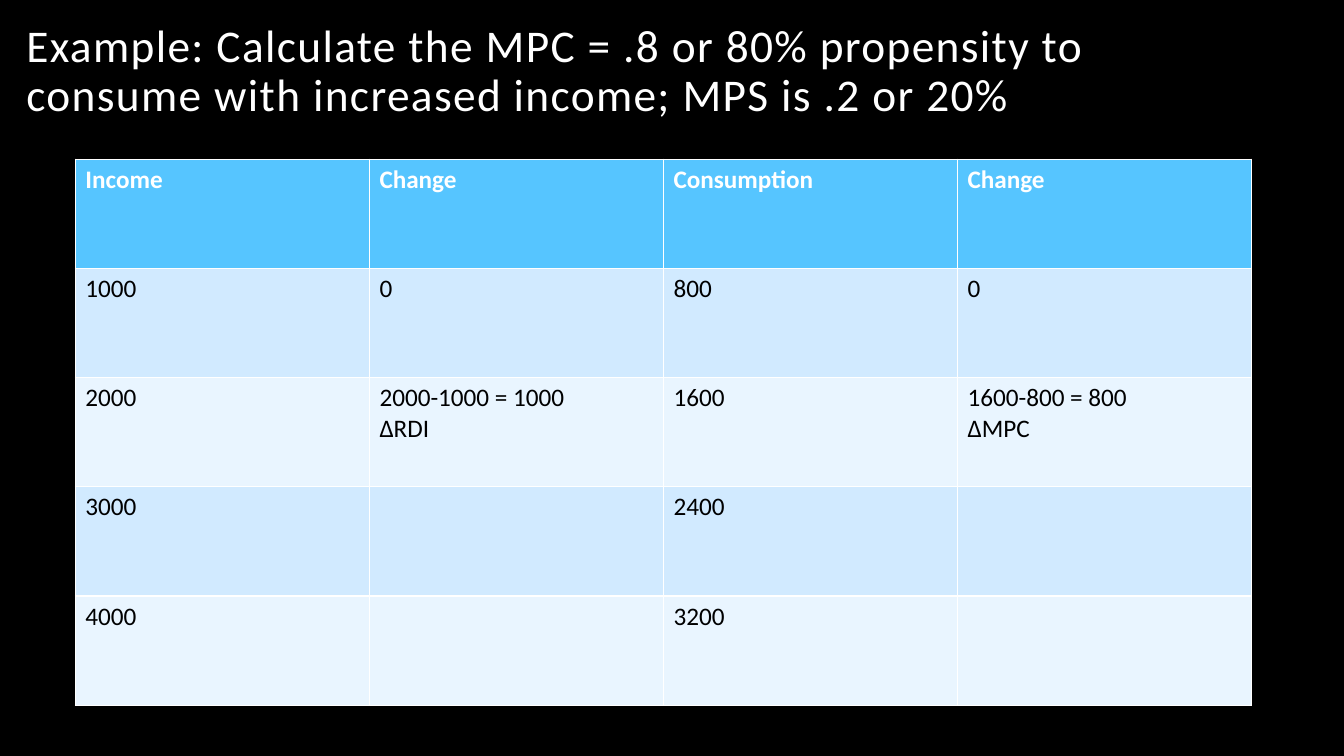
from dataclasses import dataclass

from pptx import Presentation
from pptx.dml.color import RGBColor
from pptx.enum.text import MSO_ANCHOR, MSO_AUTO_SIZE, PP_ALIGN
from pptx.util import Cm, Pt

# Content
TITLE = ("Example: Calculate the MPC = .8 or 80% propensity to consume "
         "with increased income; MPS is .2 or 20%")
ROWS = [
    ("Income", "Change", "Consumption", "Change"),
    ("1000", "0", "800", "0"),
    ("2000", "2000-1000 = 1000\n∆RDI", "1600", "1600-800 = 800\n∆MPC"),
    ("3000", "", "2400", ""),
    ("4000", "", "3200", ""),
]


@dataclass(frozen=True)
class Theme:
    font: str = "Calibri"
    title_size: float = 32.4
    table_size: float = 18
    background: RGBColor = RGBColor(0x00, 0x00, 0x00)
    light_text: RGBColor = RGBColor(0xFF, 0xFF, 0xFF)
    dark_text: RGBColor = RGBColor(0x00, 0x00, 0x00)
    header: RGBColor = RGBColor(0x56, 0xC5, 0xFF)
    bands: tuple = (RGBColor(0xD1, 0xEA, 0xFF), RGBColor(0xE9, 0xF5, 0xFF))


THEME = Theme()


def format_paragraph(paragraph, size, color, bold=False):
    paragraph.font.name = THEME.font
    paragraph.font.size = Pt(size)
    paragraph.font.color.rgb = color
    paragraph.font.bold = bold


def add_title(slide):
    title = slide.shapes.title
    title.left, title.top, title.width, title.height = (
        Cm(0.41), Cm(0.84), Cm(29.21), Cm(2.34))
    frame = title.text_frame
    frame.text = TITLE
    frame.word_wrap = True
    frame.auto_size = MSO_AUTO_SIZE.NONE
    frame.vertical_anchor = MSO_ANCHOR.BOTTOM
    paragraph = frame.paragraphs[0]
    paragraph.alignment = PP_ALIGN.LEFT
    paragraph.line_spacing = 0.9
    format_paragraph(paragraph, THEME.title_size, THEME.light_text)
    # Letter spacing of one point
    paragraph.runs[0].font._element.set("spc", "100")


def add_income_table(slide):
    table = slide.shapes.add_table(
        len(ROWS), len(ROWS[0]), Cm(1.9), Cm(4.01), Cm(29.64), Cm(13.76)).table
    for row_index, row in enumerate(ROWS):
        is_header = row_index == 0
        fill = THEME.header if is_header else THEME.bands[(row_index - 1) % 2]
        color = THEME.light_text if is_header else THEME.dark_text
        for column_index, text in enumerate(row):
            cell = table.cell(row_index, column_index)
            cell.text = text
            cell.fill.solid()
            cell.fill.fore_color.rgb = fill
            for paragraph in cell.text_frame.paragraphs:
                format_paragraph(paragraph, THEME.table_size, color, is_header)


def main():
    presentation = Presentation()
    presentation.slide_width, presentation.slide_height = Cm(33.87), Cm(19.05)
    slide = presentation.slides.add_slide(presentation.slide_layouts[5])
    slide.background.fill.solid()
    slide.background.fill.fore_color.rgb = THEME.background
    add_title(slide)
    add_income_table(slide)
    presentation.save("out.pptx")


if __name__ == "__main__":
    main()
